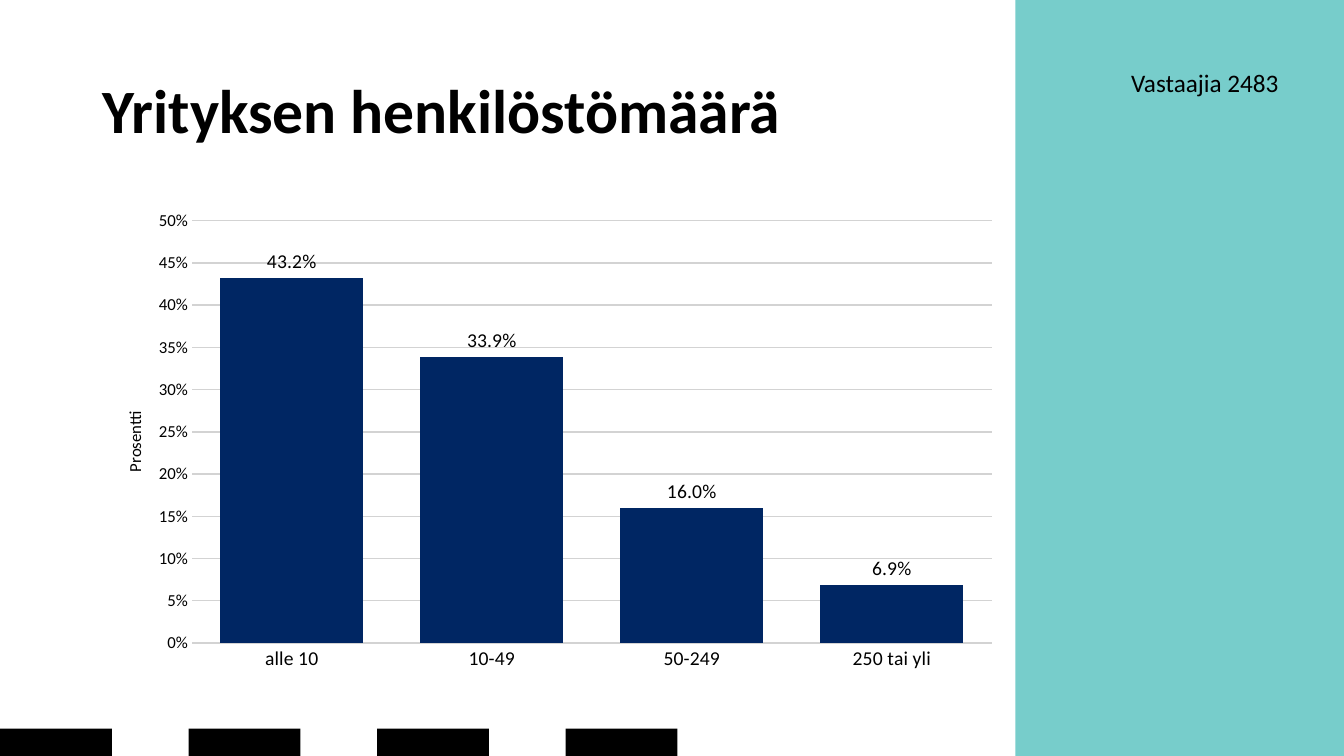
from lxml.etree import SubElement
from pptx import Presentation
from pptx.chart.data import CategoryChartData
from pptx.dml.color import RGBColor
from pptx.enum.chart import XL_CHART_TYPE as ChartType, XL_LABEL_POSITION as LabelPosition
from pptx.enum.chart import XL_TICK_MARK as TickMark
from pptx.enum.shapes import MSO_SHAPE as Preset
from pptx.enum.text import MSO_ANCHOR as Anchor, MSO_AUTO_SIZE as AutoSize, PP_ALIGN as Align
from pptx.oxml.ns import qn
from pptx.util import Inches, Pt

BLACK = RGBColor(0x00, 0x00, 0x00)
WHITE = RGBColor(0xFF, 0xFF, 0xFF)
TEAL = RGBColor(0x77, 0xCD, 0xCB)
NAVY = RGBColor(0x00, 0x26, 0x63)
GRID_GREY = RGBColor(0xD3, 0xD3, 0xD3)
FONT = "Calibri"
SHARES = {"alle 10": 0.432, "10-49": 0.339, "50-249": 0.16, "250 tai yli": 0.069}


def set_font(font, size, bold=False):
    """Apply the slide's font in the given size."""
    for name, value in {"name": FONT, "size": Pt(size), "bold": bold}.items():
        setattr(font, name, value)
    font.color.rgb = BLACK


def add_block(page, box, color):
    """Draw a plain filled rectangle."""
    block = page.shapes.add_shape(Preset.RECTANGLE, *map(Inches, box))
    block.shadow.inherit = False
    block.fill.solid()
    block.fill.fore_color.rgb = color
    block.line.fill.background()


def add_bottom_blocks(page, box, count, step):
    """Draw the row of blocks, the first one filling the box."""
    left, top, width, height = box
    for index in range(count):
        add_block(page, (left + index * step, top, width, height), BLACK)


def add_title(page, box, text):
    """Place the title placeholder in the box, above the background."""
    title = page.shapes.title
    title.element.getparent().append(title.element)
    for name, value in zip(("left", "top", "width", "height"), box):
        setattr(title, name, Inches(value))
    frame = title.text_frame
    frame.vertical_anchor = Anchor.MIDDLE
    para = frame.paragraphs[0]
    para.alignment = Align.LEFT
    para.line_spacing = 0.9
    span = para.add_run()
    span.text = text
    set_font(span.font, 44, True)


def add_respondents(page, box, text):
    """Write the right-aligned number of respondents."""
    frame = page.shapes.add_textbox(*map(Inches, box)).text_frame
    frame.word_wrap = True
    frame.auto_size = AutoSize.SHAPE_TO_FIT_TEXT
    para = frame.paragraphs[0]
    para.alignment = Align.RIGHT
    span = para.add_run()
    span.text = text
    set_font(span.font, 18)


def set_layout(element, values):
    """Fix the place of a chart part, in fractions of the chart."""
    layout = element.find(qn("c:layout"))
    if layout is None:
        layout = SubElement(element, qn("c:layout"))
        anchor = element.find(qn("c:tx"))
        if anchor is None:
            element.insert(0, layout)
        else:
            anchor.addnext(layout)
    manual = SubElement(layout, qn("c:manualLayout"))
    for name, value in values.items():
        SubElement(manual, qn(f"c:{name}")).set("val", str(value))


def format_axes(chart):
    """Format both axes, the gridlines and the value title."""
    for axis, size in ((chart.category_axis, 14), (chart.value_axis, 12)):
        axis.major_tick_mark = TickMark.INSIDE
        axis.minor_tick_mark = TickMark.NONE
        axis.format.line.fill.background()
        set_font(axis.tick_labels.font, size)
    axis = chart.value_axis
    for name, value in {"minimum_scale": 0, "maximum_scale": 0.5, "major_unit": 0.05}.items():
        setattr(axis, name, value)
    axis.tick_labels.number_format = "0%"
    axis.tick_labels.number_format_is_linked = False
    grid = axis.major_gridlines.format.line
    grid.color.rgb = GRID_GREY
    grid.width = Pt(1)
    span = axis.axis_title.text_frame.paragraphs[0].add_run()
    span.text = "Prosentti"
    set_font(span.font, 12)
    set_layout(axis.axis_title._element,
               {"xMode": "edge", "yMode": "edge", "x": 0.03, "y": 0.43})


def format_columns(plot):
    """Colour the columns and label them with their values."""
    plot.gap_width = 40
    plot.vary_by_categories = False
    fill = plot.series[0].format.fill
    fill.solid()
    fill.fore_color.rgb = NAVY
    plot.has_data_labels = True
    labels = plot.data_labels
    for name, value in {"show_value": True, "position": LabelPosition.OUTSIDE_END,
                        "number_format": "0.0%", "number_format_is_linked": False}.items():
        setattr(labels, name, value)
    set_font(labels.font, 14)


def add_share_chart(page, box):
    """Draw the column chart of company sizes in the box."""
    data = CategoryChartData()
    data.categories = list(SHARES)
    data.add_series("Series 1", list(SHARES.values()))
    chart = page.shapes.add_chart(ChartType.COLUMN_CLUSTERED, *map(Inches, box), data).chart
    chart.has_title = False
    chart.has_legend = False
    set_font(chart.font, 11)
    format_axes(chart)
    format_columns(chart.plots[0])
    plot_area = chart.element.find(".//" + qn("c:plotArea"))
    set_layout(plot_area, {"layoutTarget": "inner", "xMode": "edge", "yMode": "edge",
                           "x": 0.108, "y": 0.04, "w": 0.872, "h": 0.88})
    properties = SubElement(plot_area, qn("c:spPr"))
    fill = SubElement(properties, qn("a:solidFill"))
    SubElement(fill, qn("a:srgbClr")).set("val", str(WHITE))


def main():
    """Build the slide and save the deck."""
    deck = Presentation()
    deck.slide_width, deck.slide_height = Inches(13.33), Inches(7.5)
    page = deck.slides.add_slide(deck.slide_layouts[5])
    add_block(page, (10.07, 0, 3.26, 7.5), TEAL)
    add_bottom_blocks(page, (0, 7.23, 1.11, 0.27), 4, 1.87)
    add_title(page, (0.92, 0.4, 11.5, 1.45), "Yrityksen henkilöstömäärä")
    add_respondents(page, (10.71, 0.62, 2.07, 0.4), "Vastaajia 2483")
    add_share_chart(page, (0.92, 2, 9.1, 4.76))
    deck.save("out.pptx")


if __name__ == "__main__":
    main()
